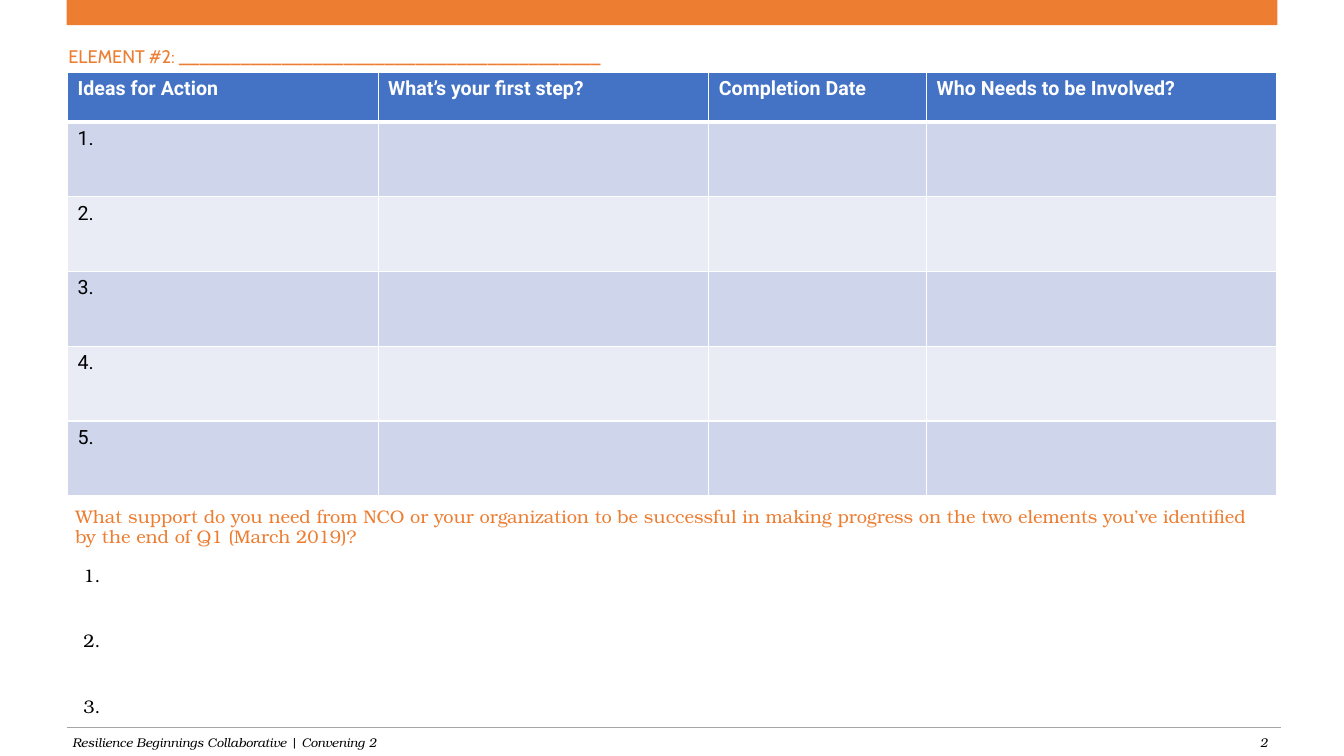
import dataclasses

import lxml.etree
import pptx
import pptx.dml.color
import pptx.enum.shapes
import pptx.enum.text
import pptx.oxml.ns
import pptx.util

Inches = pptx.util.Inches
Pt = pptx.util.Pt
qn = pptx.oxml.ns.qn
Align = pptx.enum.text.PP_ALIGN
Anchor = pptx.enum.text.MSO_ANCHOR


@dataclasses.dataclass(frozen=True)
class Theme:
    """Colours, fonts and type sizes of the slide."""
    orange: str = "ED7D31"
    blue: str = "4472C4"
    bands: tuple = ("CFD5EA", "E9EBF5")
    grey: str = "A5A5A5"
    black: str = "000000"
    white: str = "FFFFFF"
    serif: str = "TeX Gyre Bonum"
    sans: str = "Roboto"
    label: str = "Cabin"
    small: int = 9
    body: int = 13
    cell: int = 14


THEME = Theme()
HEADS = ["Ideas for Action", "What’s your first step?",
         "Completion Date", "Who Needs to be Involved?"]
WIDTHS = [3.08, 3.28, 2.16, 3.47]
ROWS = 5


def rgb(code):
    """Turn a hex code into a colour."""
    return pptx.dml.color.RGBColor.from_string(code)


def style(para, face, size, color, bold=False, italic=False):
    """Format the runs of a paragraph."""
    for run in para.runs:
        font = run.font
        font.name, font.size = face, Pt(size)
        font.bold, font.italic = bold, italic
        font.color.rgb = rgb(color)


def write(slide, box, lines, face, size, color, italic=False,
          align=Align.LEFT, anchor=Anchor.MIDDLE, gap=0, lead=0.9):
    """Place a text box with one paragraph per line."""
    frame = slide.shapes.add_textbox(*map(Inches, box)).text_frame
    frame.word_wrap = True
    frame.vertical_anchor = anchor
    frame.text = "\n".join(lines)
    for index, para in enumerate(frame.paragraphs):
        para.alignment, para.line_spacing = align, lead
        if index:
            para.space_before = Pt(gap)
        style(para, face, size, color, italic=italic)


def banner(slide, box):
    """Draw the bar along the top."""
    bar = slide.shapes.add_shape(
        pptx.enum.shapes.MSO_SHAPE.RECTANGLE, *map(Inches, box))
    bar.shadow.inherit = False
    bar.fill.solid()
    bar.fill.fore_color.rgb = rgb(THEME.orange)
    bar.line.fill.background()


def footer(slide, box):
    """Draw the rule, the footer text and the page number."""
    left, top, width, height = box
    rule = slide.shapes.add_connector(
        pptx.enum.shapes.MSO_CONNECTOR.STRAIGHT,
        *map(Inches, (left, top, left + width, top)))
    rule.line.color.rgb = rgb(THEME.grey)
    rule.line.width = Pt(0.5)
    lxml.etree.SubElement(rule._element.spPr, qn("a:effectLst"))
    font = (THEME.serif, THEME.small, THEME.black)
    write(slide, (left - 0.04, top - 0.01, 6.23, height),
          ["Resilience Beginnings Collaborative | Convening 2"],
          *font, italic=True)
    write(slide, (left + width - 2.33, top - 0.01, 2.29, height), ["2"],
          *font, italic=True, align=Align.RIGHT)


def border(cell, foot):
    """Put white lines around a cell, the lowest of the given width."""
    props = cell._tc.get_or_add_tcPr()
    for side, width in zip("LRTB", (1, 1, 1, foot)):
        line = lxml.etree.SubElement(
            props, qn("a:ln" + side), w=str(Pt(width)))
        fill = lxml.etree.SubElement(line, qn("a:solidFill"))
        lxml.etree.SubElement(fill, qn("a:srgbClr"), val=THEME.white)


def plan(slide, box, head):
    """Build the action table with numbered rows below its header."""
    height = box[3]
    table = slide.shapes.add_table(
        ROWS + 1, len(HEADS), *map(Inches, box)).table
    for col, width in zip(table.columns, WIDTHS):
        col.width = Inches(width)
    for index, row in enumerate(table.rows):
        top = index == 0
        row.height = Inches(head if top else (height - head) / ROWS)
        texts = HEADS if top else [f"{index}."] + [""] * (len(HEADS) - 1)
        shade = THEME.blue if top else THEME.bands[(index - 1) % 2]
        for cell, text in zip(row.cells, texts):
            border(cell, 3 if top else 1)
            cell.fill.solid()
            cell.fill.fore_color.rgb = rgb(shade)
            cell.text = text
            style(cell.text_frame.paragraphs[0], THEME.sans, THEME.cell,
                  THEME.white if top else THEME.black, bold=top)


def support(slide, box):
    """Place the support question and its numbered answer lines."""
    left, top, width, height = box
    write(slide, (left, top, width, 0.57),
          ["What support do you need from NCO or your organization to be "
           "successful in making progress on the two elements you’ve "
           "identified by the end of Q1 (March 2019)?"],
          THEME.serif, THEME.body, THEME.orange)
    write(slide, (left + 0.08, top + 0.6, 6.67, height - 0.6),
          [f"{num}." for num in range(1, 4)],
          THEME.serif, THEME.body, THEME.black,
          anchor=Anchor.TOP, gap=31, lead=1.0)


def main():
    """Build the slide and save it."""
    deck = pptx.Presentation()
    deck.slide_width, deck.slide_height = Inches(13.33), Inches(7.5)
    slide = deck.slides.add_slide(deck.slide_layouts[6])
    banner(slide, (0.66, 0, 12.01, 0.25))
    footer(slide, (0.66, 7.22, 12.05, 0.34))
    write(slide, (0.58, 0.42, 5.9, 0.3), ["ELEMENT #2: " + "_" * 41],
          THEME.label, THEME.body, THEME.orange)
    support(slide, (0.65, 4.95, 12, 2.23))
    plan(slide, (0.67, 0.72, 12.01, 4.2), 0.49)
    deck.save("out.pptx")


if __name__ == "__main__":
    main()
